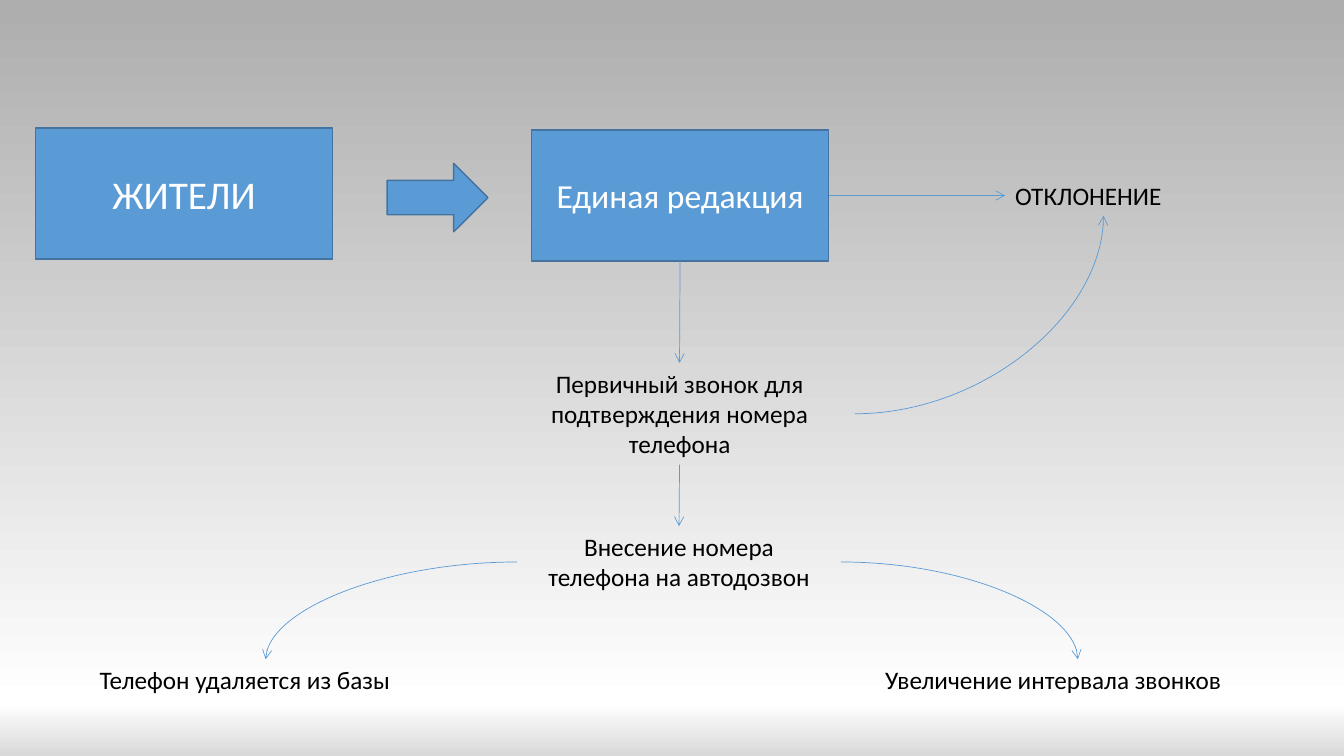
from copy import deepcopy
from pptx import Presentation
from pptx.dml.color import RGBColor
from pptx.enum.shapes import MSO_CONNECTOR, MSO_SHAPE
from pptx.enum.text import MSO_ANCHOR, MSO_AUTO_SIZE, PP_ALIGN
from pptx.oxml.ns import qn
from pptx.util import Inches, Pt

COLORS = {"blue": "5B9BD5", "edge": "43739E", "white": "FFFFFF",
          "black": "000000", "pale": "D9D9D9", "gray": "AEAEAE"}
FADE = [(0, "pale"), (0.07, "white"), (0.99, "gray")]
BLOCK = {"vertical_anchor": MSO_ANCHOR.MIDDLE, "word_wrap": True}
NOTE = {"auto_size": MSO_AUTO_SIZE.SHAPE_TO_FIT_TEXT}
TOP, LEFT, BOTTOM, RIGHT = range(4)


def color(name):
    return RGBColor.from_string(COLORS[name])


def style(item, form):
    for key, value in form.items():
        setattr(item, key, value)


def place(box, x, y, w, h):
    """Turn a spot inside a region into slide lengths."""
    return [Inches(n) for n in (box[0] + x, box[1] + y, w, h)]


def write(shape, lines, size, ink, align, form):
    frame = shape.text_frame
    style(frame, form)
    frame.text = "\n".join(lines)
    for par in frame.paragraphs:
        par.alignment = align
        style(par.runs[0].font, {"name": "Calibri", "size": Pt(size)})
        par.runs[0].font.color.rgb = color(ink)


def block(slide, kind, spot):
    shape = slide.shapes.add_shape(kind, *spot)
    shape.shadow.inherit = False
    shape.fill.solid()
    shape.fill.fore_color.rgb = color("blue")
    shape.line.color.rgb = color("edge")
    shape.line.width = Pt(1)
    return shape


def note(slide, spot, lines, align=PP_ALIGN.LEFT, wrap=False):
    shape = slide.shapes.add_textbox(*spot)
    write(shape, lines, 18, "black", align, {**NOTE, "word_wrap": wrap})
    return shape


def arrow(slide, kind, ends):
    link = slide.shapes.add_connector(kind, *ends)
    link.line.color.rgb = color("blue")
    link.line.width = Pt(0.5)
    props = link.element.spPr
    tip = props.find(qn("a:ln")).makeelement(qn("a:tailEnd"), {"type": "arrow"})
    props.find(qn("a:ln")).append(tip)
    props.append(props.makeelement(qn("a:effectLst"), {}))
    return link


def join(slide, start, out, end, into):
    """Straight arrow between the sides of two boxes."""
    link = arrow(slide, MSO_CONNECTOR.STRAIGHT, (0, 0, 0, 0))
    link.begin_connect(start, out)
    link.end_connect(end, into)


def bend(slide, start, out, end, into):
    """Quarter curve from a left or right side to a top or bottom."""
    ends = (start.left + (start.width if out == RIGHT else 0),
            start.top + start.height // 2,
            end.left + end.width // 2,
            end.top + (end.height if into == BOTTOM else 0))
    link = arrow(slide, MSO_CONNECTOR.CURVE, ends)
    link.element.spPr.find(qn("a:prstGeom")).set("prst", "curvedConnector2")


def backdrop(slide):
    fill = slide.background.fill
    fill.gradient()
    fill.gradient_angle = 90
    stops = slide.element.find(".//" + qn("a:gsLst"))
    stops.append(deepcopy(stops[-1]))
    for stop, (spot, name) in zip(fill.gradient_stops, FADE):
        stop.position = spot
        stop.color.rgb = color(name)


def intake(slide, box):
    """Residents, the editors and the refusal."""
    for x, y, text, size in [(0, 0, "ЖИТЕЛИ", 28),
                             (4.92, 0.02, "Единая редакция", 24)]:
        desk = block(slide, MSO_SHAPE.RECTANGLE, place(box, x, y, 2.95, 1.3))
        write(desk, [text], size, "white", PP_ALIGN.CENTER, BLOCK)
    block(slide, MSO_SHAPE.RIGHT_ARROW, place(box, 3.49, 0.35, 1, 0.68))
    refuse = note(slide, place(box, 9.62, 0.47, 1.95, 0.4), ["ОТКЛОНЕНИЕ"])
    join(slide, desk, RIGHT, refuse, LEFT)
    return desk, refuse


def calls(slide, box):
    """First call and automatic dialling."""
    first = note(slide, place(box, 0, 0, 3.48, 1.01),
                 ["Первичный звонок для подтверждения номера телефона"],
                 PP_ALIGN.CENTER, True)
    dial = note(slide, place(box, 0.13, 1.62, 3.21, 0.71),
                ["Внесение номера", "телефона на автодозвон"],
                PP_ALIGN.CENTER, True)
    join(slide, first, BOTTOM, dial, TOP)
    return first, dial


def results(slide, box, dial):
    """Two outcomes of automatic dialling."""
    for x, w, text, side in [(0, 3.49, "Телефон удаляется из базы", LEFT),
                             (7.79, 4.02, "Увеличение интервала звонков", RIGHT)]:
        end = note(slide, place(box, x, 0, w, 0.4), [text])
        bend(slide, dial, side, end, TOP)


def main():
    deck = Presentation()
    style(deck, {"slide_width": Inches(13.33), "slide_height": Inches(7.5)})
    slide = deck.slides.add_slide(deck.slide_layouts[6])
    backdrop(slide)
    desk, refuse = intake(slide, (0.35, 1.27))
    first, dial = calls(slide, (5, 3.6))
    results(slide, (0.89, 6.54), dial)
    # Links between regions
    join(slide, desk, BOTTOM, first, TOP)
    bend(slide, first, RIGHT, refuse, BOTTOM)
    deck.save("out.pptx")


if __name__ == "__main__":
    main()
